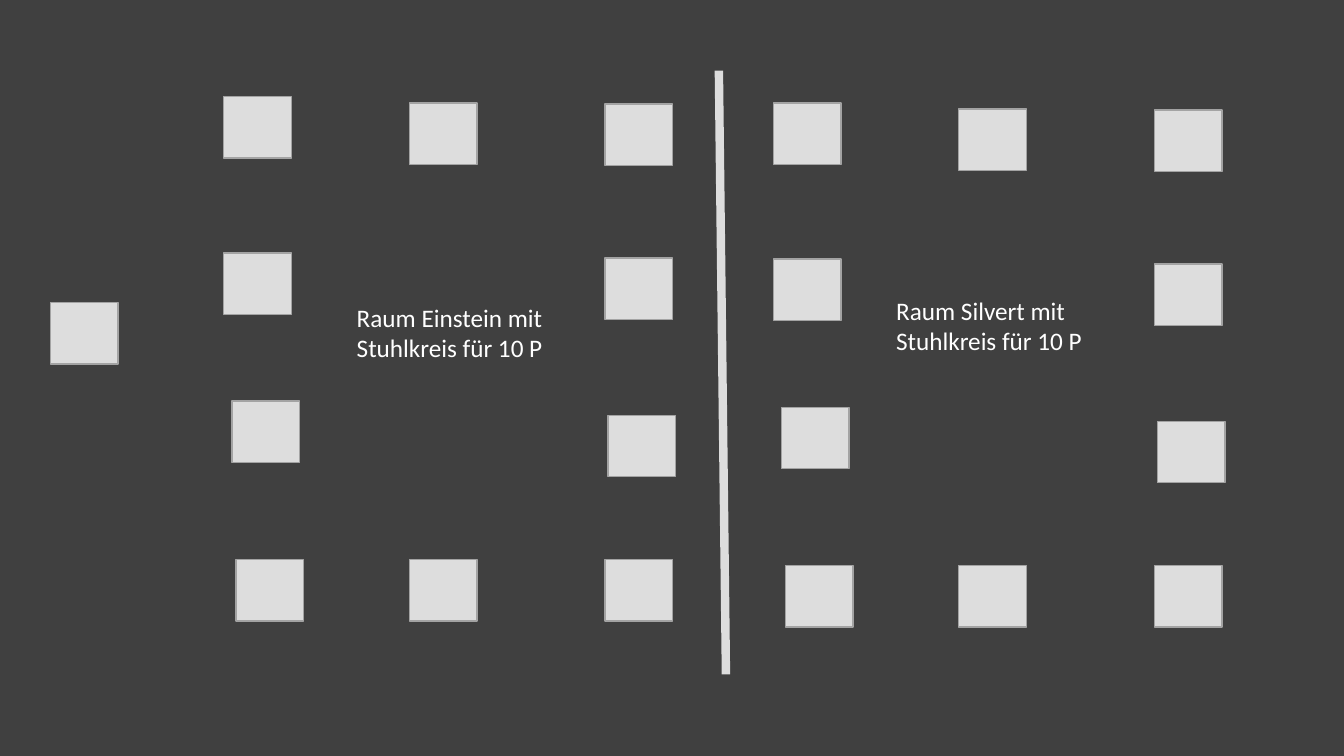
from pptx import Presentation
from pptx.dml.color import RGBColor
from pptx.enum.shapes import MSO_CONNECTOR, MSO_SHAPE
from pptx.enum.text import MSO_AUTO_SIZE
from pptx.oxml.ns import qn
from pptx.util import Inches, Pt
from lxml import etree

RECT = MSO_SHAPE.RECTANGLE
STRAIGHT = MSO_CONNECTOR.STRAIGHT
GROW = MSO_AUTO_SIZE.SHAPE_TO_FIT_TEXT

COLORS = {"floor": "404040", "chair": "DDDDDD", "edge": "A3A3A3", "text": "FFFFFF"}
CHAIRS = [
    (2.22, 2.51), (2.3, 3.98), (2.34, 5.55), (4.06, 5.55), (6, 5.55),
    (6.03, 4.12), (6, 2.56), (6, 1.03), (4.06, 1.02), (2.22, 0.96),
]
ROOMS = [
    ("Einstein", (0, 0), (3.44, 2.95)),
    ("Silvert", (5.45, 0.06), (8.79, 2.88)),
]
EXTRA = (0.5, 3)


def color(name):
    return RGBColor.from_string(COLORS[name])


def add_chair(slide, left, top):
    chair = slide.shapes.add_shape(
        RECT, Inches(left), Inches(top), Inches(0.67), Inches(0.61))
    chair.shadow.inherit = False
    chair.fill.solid()
    chair.fill.fore_color.rgb = color("chair")
    chair.line.color.rgb = color("edge")
    chair.line.width = Pt(1)


def add_label(slide, text, left, top):
    box = slide.shapes.add_textbox(
        Inches(left), Inches(top), Inches(2.1), Inches(0.71))
    frame = box.text_frame
    frame.word_wrap = True
    frame.auto_size = GROW
    frame.text = text
    font = frame.paragraphs[0].font
    font.name = "Calibri"
    font.size = Pt(18)
    font.color.rgb = color("text")


def add_wall(slide):
    wall = slide.shapes.add_connector(
        STRAIGHT, Inches(7.13), Inches(0.7), Inches(7.2), Inches(6.69))
    wall.line.color.rgb = color("chair")
    wall.line.width = Pt(6)
    etree.SubElement(wall._element.spPr, qn("a:effectLst"))


def add_room(slide, name, shift, place):
    for left, top in CHAIRS:
        add_chair(slide, left + shift[0], top + shift[1])
    add_label(slide, f"Raum {name} mit Stuhlkreis für 10 P", *place)


def main():
    deck = Presentation()
    deck.slide_width = Inches(13.33)
    deck.slide_height = Inches(7.5)
    slide = deck.slides.add_slide(deck.slide_layouts.get_by_name("Blank"))
    fill = slide.background.fill
    fill.solid()
    fill.fore_color.rgb = color("floor")
    add_chair(slide, *EXTRA)
    add_wall(slide)
    for room in ROOMS:
        add_room(slide, *room)
    deck.save("out.pptx")


if __name__ == "__main__":
    main()
